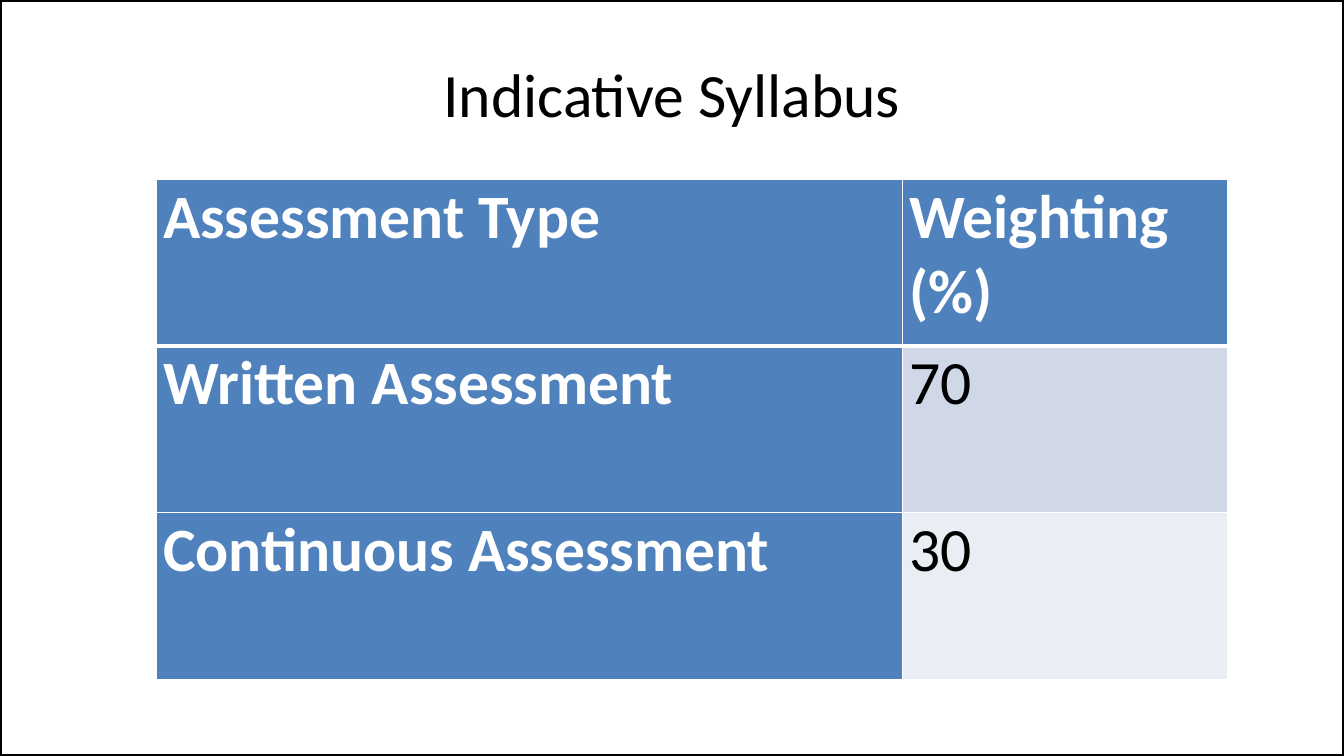
"""Build the Indicative Syllabus slide with its table of assessment weightings."""
from typing import NamedTuple

from pptx import Presentation
from pptx.dml.color import RGBColor
from pptx.enum.shapes import MSO_SHAPE as Shape
from pptx.enum.text import MSO_ANCHOR as Anchor, PP_ALIGN as Align
from pptx.oxml.ns import qn
from pptx.util import Pt
from lxml.etree import SubElement

COLOURS = {
    "black": "000000",
    "white": "FFFFFF",
    "blue": "4F81BD",
    "band": "D0D8E8",
    "pale": "E9EDF4",
}
FONT = "Calibri"
SIZE = 44
WIDTH, HEIGHT = 960, 540
COLUMN_WIDTHS = (532.8, 232.6)
ROW_HEIGHT = 119


class Entry(NamedTuple):
    text: str
    fill: str = "blue"
    colour: str = "white"
    bold: bool = True


ROWS = (
    (Entry("Assessment Type"), Entry("Weighting (%)")),
    (Entry("Written Assessment"), Entry("70", "band", "black", False)),
    (Entry("Continuous Assessment"), Entry("30", "pale", "black", False)),
)


def rgb(name: str) -> RGBColor:
    return RGBColor.from_string(COLOURS[name])


def write(para, text: str, colour: str, bold: bool, align) -> None:
    para.alignment = align
    span = para.add_run()
    span.text = text
    span.font.name = FONT
    span.font.size = Pt(SIZE)
    span.font.bold = bold
    span.font.color.rgb = rgb(colour)


def add_border(cell, side: str, width: float) -> None:
    properties = cell._tc.get_or_add_tcPr()
    line = SubElement(properties, qn(f"a:ln{side}"), w=str(Pt(width)))
    fill = SubElement(line, qn("a:solidFill"))
    SubElement(fill, qn("a:srgbClr"), val=COLOURS["white"])


def draw_cell(cell, entry: Entry, row: int) -> None:
    widths = {"L": 1, "R": 1, "T": 3 if row == 1 else 1, "B": 3 if row == 0 else 1}
    for side, width in widths.items():
        add_border(cell, side, width)
    cell.fill.solid()
    cell.fill.fore_color.rgb = rgb(entry.fill)
    cell.margin_left = cell.margin_right = Pt(5)
    cell.margin_top = cell.margin_bottom = Pt(0)
    cell.vertical_anchor = Anchor.TOP
    para = cell.text_frame.paragraphs[0]
    para.space_after = Pt(6)
    write(para, entry.text, entry.colour, entry.bold, Align.JUSTIFY)


def draw_title(page) -> None:
    box = page.shapes.add_textbox(Pt(48), Pt(21.6), Pt(864), Pt(90))
    frame = box.text_frame
    frame.word_wrap = True
    frame.vertical_anchor = Anchor.MIDDLE
    write(frame.paragraphs[0], "Indicative Syllabus", "black", False, Align.CENTER)


def draw_frame(page) -> None:
    outline = page.shapes.add_shape(Shape.RECTANGLE, 0, 0, Pt(WIDTH), Pt(HEIGHT))
    outline.shadow.inherit = False
    outline.fill.background()
    outline.line.color.rgb = rgb("black")
    outline.line.width = Pt(3)


def draw_table(page) -> None:
    table = page.shapes.add_table(
        len(ROWS), len(COLUMN_WIDTHS), Pt(111.6), Pt(128.2),
        Pt(sum(COLUMN_WIDTHS)), Pt(ROW_HEIGHT * len(ROWS)),
    ).table
    for column, width in zip(table.columns, COLUMN_WIDTHS):
        column.width = Pt(width)
    for row, entries in enumerate(ROWS):
        table.rows[row].height = Pt(ROW_HEIGHT)
        for column, entry in enumerate(entries):
            draw_cell(table.cell(row, column), entry, row)


def main() -> None:
    deck = Presentation()
    deck.slide_width, deck.slide_height = Pt(WIDTH), Pt(HEIGHT)
    page = deck.slides.add_slide(deck.slide_layouts[6])
    draw_title(page)
    draw_frame(page)
    draw_table(page)
    deck.save("out.pptx")


if __name__ == "__main__":
    main()
